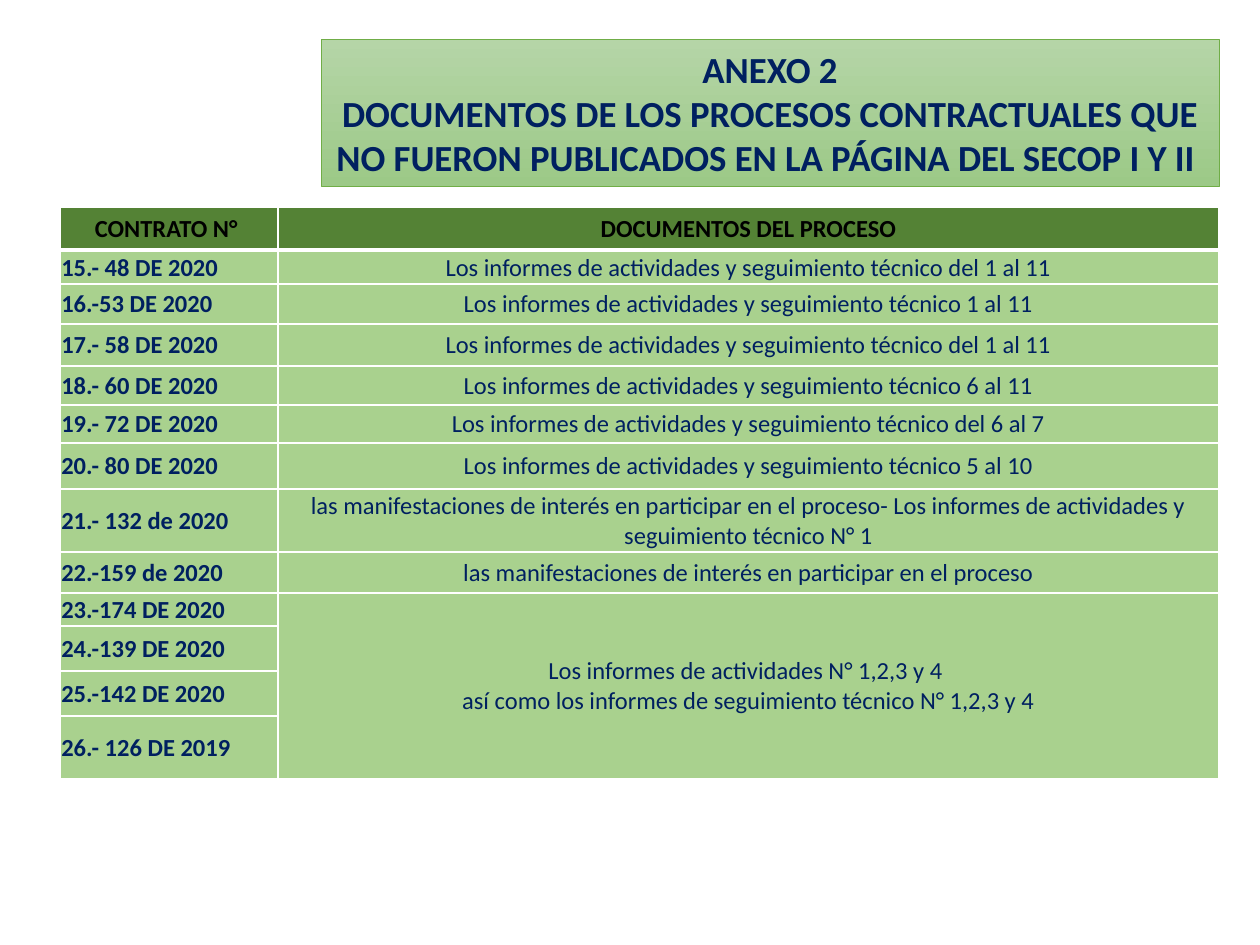
from dataclasses import dataclass

from lxml import etree
from pptx import Presentation
from pptx import util as u
from pptx.dml.color import RGBColor
from pptx.enum import text
from pptx.oxml.ns import qn

SCALE = u.Inches(1) / 126


@dataclass(frozen=True)
class Theme:
    """Colours, font and type sizes of the slide."""
    font: str = "Calibri"
    navy: str = "002060"
    black: str = "000000"
    white: str = "FFFFFF"
    header: str = "548235"
    body: str = "A9D18E"
    banner_top: str = "B5D5A7"
    banner_bottom: str = "9CC987"
    banner_edge: str = "70AD47"
    title_size: int = 21
    table_size: int = 14


THEME = Theme()
TITLE = (
    "ANEXO 2",
    "DOCUMENTOS DE LOS PROCESOS CONTRACTUALES QUE NO FUERON PUBLICADOS "
    "EN LA PÁGINA DEL SECOP I Y II ",
)
REPORTS = "Los informes de actividades y seguimiento técnico "
INTEREST = "las manifestaciones de interés en participar en el proceso"
SHARED_DOCUMENTS = (
    "Los informes de actividades N° 1,2,3 y 4 \n"
    "así como los informes de seguimiento técnico N° 1,2,3 y 4"
)
CONTRACTS = [
    ("CONTRATO N° ", "DOCUMENTOS DEL PROCESO", 43),
    ("15.- 48 DE 2020", REPORTS + "del 1 al 11", 34),
    ("16.-53 DE 2020", REPORTS + "1 al 11", 40),
    ("17.- 58 DE 2020", REPORTS + "del 1 al 11", 42),
    ("18.- 60 DE 2020", REPORTS + "6 al 11", 39),
    ("19.- 72 DE 2020", REPORTS + "del 6 al 7", 38),
    ("20.- 80 DE 2020", REPORTS + "5 al 10", 46),
    ("21.- 132 de 2020", INTEREST + "- " + REPORTS + "N° 1", 63),
    ("22.-159 de 2020", INTEREST, 41),
    ("23.-174 DE 2020", SHARED_DOCUMENTS, 33),
    ("24.-139 DE 2020", None, 45),
    ("25.-142 DE 2020", None, 45),
    ("26.- 126 DE 2019", None, 63),
]
SHARED_FROM = 9
COLUMN_WIDTHS = (218, 941)


def px(length):
    """Turn whole pixels into EMU."""
    return u.Emu(round(length * SCALE))


def rgb(colour):
    """Turn a hex string into a colour."""
    return RGBColor.from_string(colour)


def format_text(frame, size, colour, bold, align):
    """Give every paragraph of a frame the same look."""
    for paragraph in frame.paragraphs:
        paragraph.alignment = align
        paragraph.font.name = THEME.font
        paragraph.font.size = u.Pt(size)
        paragraph.font.bold = bold
        paragraph.font.color.rgb = rgb(colour)


def add_banner(slide):
    """Place the title on a green gradient."""
    banner = slide.shapes.title
    banner.left, banner.top, banner.width, banner.height = map(px, (321, 40, 898, 146))
    banner.fill.gradient()
    banner.fill.gradient_angle = 270
    for stop, colour in zip(banner.fill.gradient_stops, (THEME.banner_top, THEME.banner_bottom)):
        stop.color.rgb = rgb(colour)
    banner.line.color.rgb = rgb(THEME.banner_edge)
    banner.line.width = u.Pt(0.5)
    frame = banner.text_frame
    frame.text = "\n".join(TITLE)
    frame.word_wrap = True
    frame.auto_size = text.MSO_AUTO_SIZE.SHAPE_TO_FIT_TEXT
    format_text(frame, THEME.title_size, THEME.navy, True, text.PP_ALIGN.CENTER)


def add_borders(cell, bottom):
    """Draw white borders of 1 pt, with a chosen width at the bottom."""
    properties = cell._tc.get_or_add_tcPr()
    for index, (side, width) in enumerate((("lnL", 1), ("lnR", 1), ("lnT", 1), ("lnB", bottom))):
        line = etree.Element(qn(f"a:{side}"), w=str(u.Pt(width)))
        fill = etree.SubElement(line, qn("a:solidFill"))
        etree.SubElement(fill, qn("a:srgbClr"), val=THEME.white)
        properties.insert(index, line)


def fill_cell(cell, wording, is_header, is_contract):
    """Write and format one table cell."""
    cell.margin_left = cell.margin_right = cell.margin_top = u.Inches(0.01)
    cell.margin_bottom = 0
    cell.vertical_anchor = text.MSO_ANCHOR.MIDDLE
    cell.fill.solid()
    cell.fill.fore_color.rgb = rgb(THEME.header if is_header else THEME.body)
    add_borders(cell, 3 if is_header else 1)
    if wording:
        cell.text_frame.text = wording
    left = is_contract and not is_header
    format_text(
        cell.text_frame,
        THEME.table_size,
        THEME.black if is_header else THEME.navy,
        is_header or is_contract,
        text.PP_ALIGN.LEFT if left else text.PP_ALIGN.CENTER,
    )


def add_contracts(slide):
    """Add the table of contracts and missing documents."""
    heights = [height for *_, height in CONTRACTS]
    frame = slide.shapes.add_table(
        len(CONTRACTS), len(COLUMN_WIDTHS),
        px(60), px(207), px(sum(COLUMN_WIDTHS)), px(sum(heights)),
    )
    contracts = frame.table
    contracts.horz_banding = False
    for column, width in zip(contracts.columns, COLUMN_WIDTHS):
        column.width = px(width)
    for index, (contract, documents, height) in enumerate(CONTRACTS):
        contracts.rows[index].height = px(height)
        fill_cell(contracts.cell(index, 0), contract, index == 0, True)
        fill_cell(contracts.cell(index, 1), documents, index == 0, False)
    contracts.cell(SHARED_FROM, 1).merge(contracts.cell(len(CONTRACTS) - 1, 1))


def main():
    """Build and save the slide."""
    deck = Presentation()
    deck.slide_width, deck.slide_height = px(1260), px(945)
    slide = deck.slides.add_slide(deck.slide_layouts[5])
    add_banner(slide)
    add_contracts(slide)
    deck.save("out.pptx")


if __name__ == "__main__":
    main()
